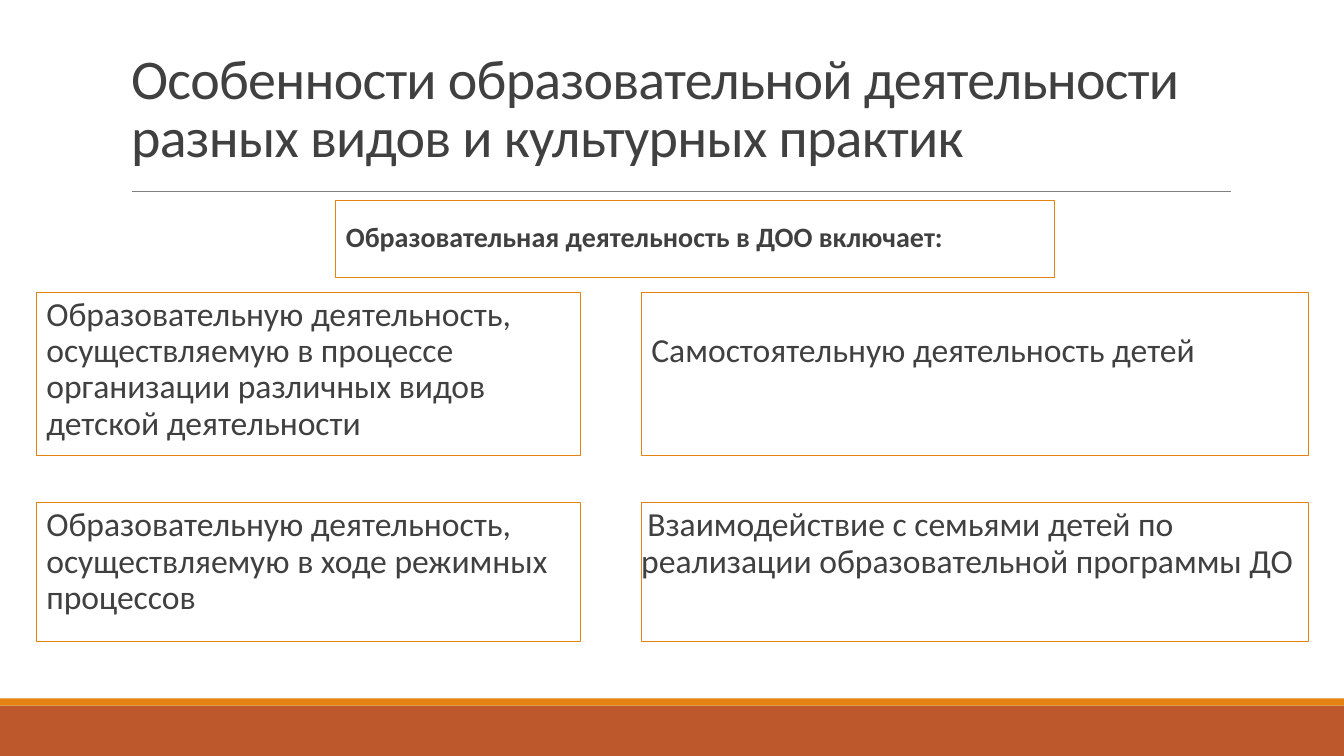
from lxml.etree import SubElement
from pptx import Presentation
from pptx.dml.color import RGBColor
from pptx.enum.shapes import MSO_CONNECTOR, MSO_SHAPE
from pptx.enum.text import MSO_ANCHOR, MSO_AUTO_SIZE, PP_ALIGN
from pptx.oxml.ns import qn
from pptx.util import Inches, Pt

ORANGE, RUST, GREY, INK = "E48312", "BD582C", "808080", "404040"
COLUMNS = [(0.36, 5.4), (6.36, 6.62)]
ROWS = [(2.9, 1.62), (4.99, 1.37)]


def color(value):
    return RGBColor.from_string(value)


def place(shape, left, top, width, height):
    shape.left, shape.top = Inches(left), Inches(top)
    shape.width, shape.height = Inches(width), Inches(height)


def add_rectangle(slide, left, top, width, height):
    box = slide.shapes.add_shape(
        MSO_SHAPE.RECTANGLE, Inches(left), Inches(top), Inches(width), Inches(height))
    box.shadow.inherit = False
    return box


def add_bar(slide, top, height, fill):
    bar = add_rectangle(slide, 0, top, 13.33, height)
    bar.fill.solid()
    bar.fill.fore_color.rgb = color(fill)
    bar.line.fill.background()


def add_rule(slide, left, right, top):
    rule = slide.shapes.add_connector(
        MSO_CONNECTOR.STRAIGHT, Inches(left), Inches(top), Inches(right), Inches(top))
    rule.line.color.rgb = color(GREY)
    rule.line.width = Pt(0.5)
    SubElement(rule._element.spPr, qn("a:effectLst"))


def write(shape, text, size, spacing, anchor, bold=False):
    """Put one left-aligned paragraph into the shape and return it."""
    frame = shape.text_frame
    frame.word_wrap = True
    frame.auto_size = MSO_AUTO_SIZE.NONE
    frame.vertical_anchor = anchor
    para = frame.paragraphs[0]
    para.alignment = PP_ALIGN.LEFT
    para.line_spacing = spacing
    para.space_before = Pt(0)
    span = para.add_run()
    span.text = text
    span.font.name = "Calibri"
    span.font.size = Pt(size)
    span.font.bold = bold
    span.font.color.rgb = color(INK)
    return para


def fill_title(title, text):
    place(title, 1.2, 0.31, 11, 1.59)
    para = write(title, text, 40, 0.85, MSO_ANCHOR.MIDDLE)
    para.runs[0].font._element.set("spc", "-50")


def fill_card(card, text, size=24, anchor=MSO_ANCHOR.TOP, bold=False,
              margin=0.1, indent=0.0, bottom=0.05):
    """Outline the card and write its unbulleted text."""
    card.fill.background()
    card.line.color.rgb = color(ORANGE)
    card.line.width = Pt(0.75)
    frame = card.text_frame
    frame.margin_left = frame.margin_right = 0
    frame.margin_top, frame.margin_bottom = Inches(0.05), Inches(bottom)
    para = write(card, text, size, 0.9, anchor, bold)
    properties = para._p.get_or_add_pPr()
    properties.set("marL", str(Inches(margin)))
    properties.set("indent", str(Inches(indent)))
    SubElement(properties, qn("a:buNone"))


def cell(column, row):
    left, width = COLUMNS[column]
    top, height = ROWS[row]
    return left, top, width, height


def main():
    deck = Presentation()
    deck.slide_width, deck.slide_height = Inches(13.33), Inches(7.5)
    slide = deck.slides.add_slide(deck.slide_layouts.get_by_name("Two Content"))
    title, heading, activities = slide.placeholders

    add_bar(slide, 7, 0.5, RUST)
    add_bar(slide, 6.93, 0.07, ORANGE)
    add_rule(slide, 1.31, 12.21, 1.9)

    fill_title(title, "Особенности образовательной деятельности "
                      "разных видов и культурных практик")

    place(heading, 3.33, 1.99, 7.13, 0.76)
    fill_card(heading, "Образовательная деятельность в ДОО включает:",
              size=20, anchor=MSO_ANCHOR.MIDDLE, bold=True)

    place(activities, *cell(0, 0))
    fill_card(activities, "Образовательную деятельность, осуществляемую в процессе "
                          "организации различных видов детской деятельности")

    fill_card(add_rectangle(slide, *cell(1, 0)), "Самостоятельную деятельность детей",
              anchor=MSO_ANCHOR.MIDDLE, bottom=0.5)
    fill_card(add_rectangle(slide, *cell(0, 1)),
              "Образовательную деятельность, осуществляемую в ходе режимных процессов")
    fill_card(add_rectangle(slide, *cell(1, 1)),
              "Взаимодействие с семьями детей по реализации образовательной программы ДО",
              margin=0, indent=0.06)

    deck.save("out.pptx")


if __name__ == "__main__":
    main()
